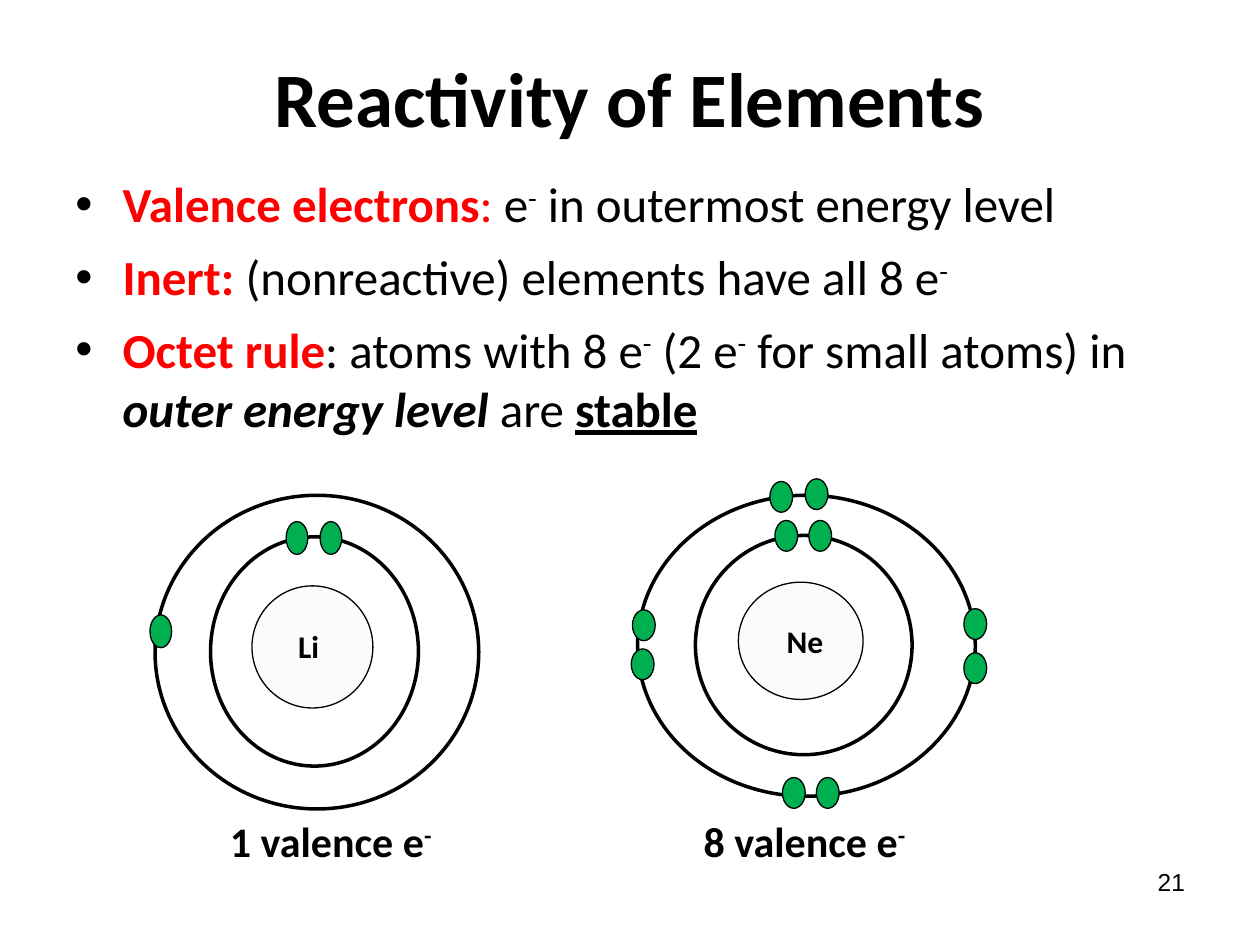
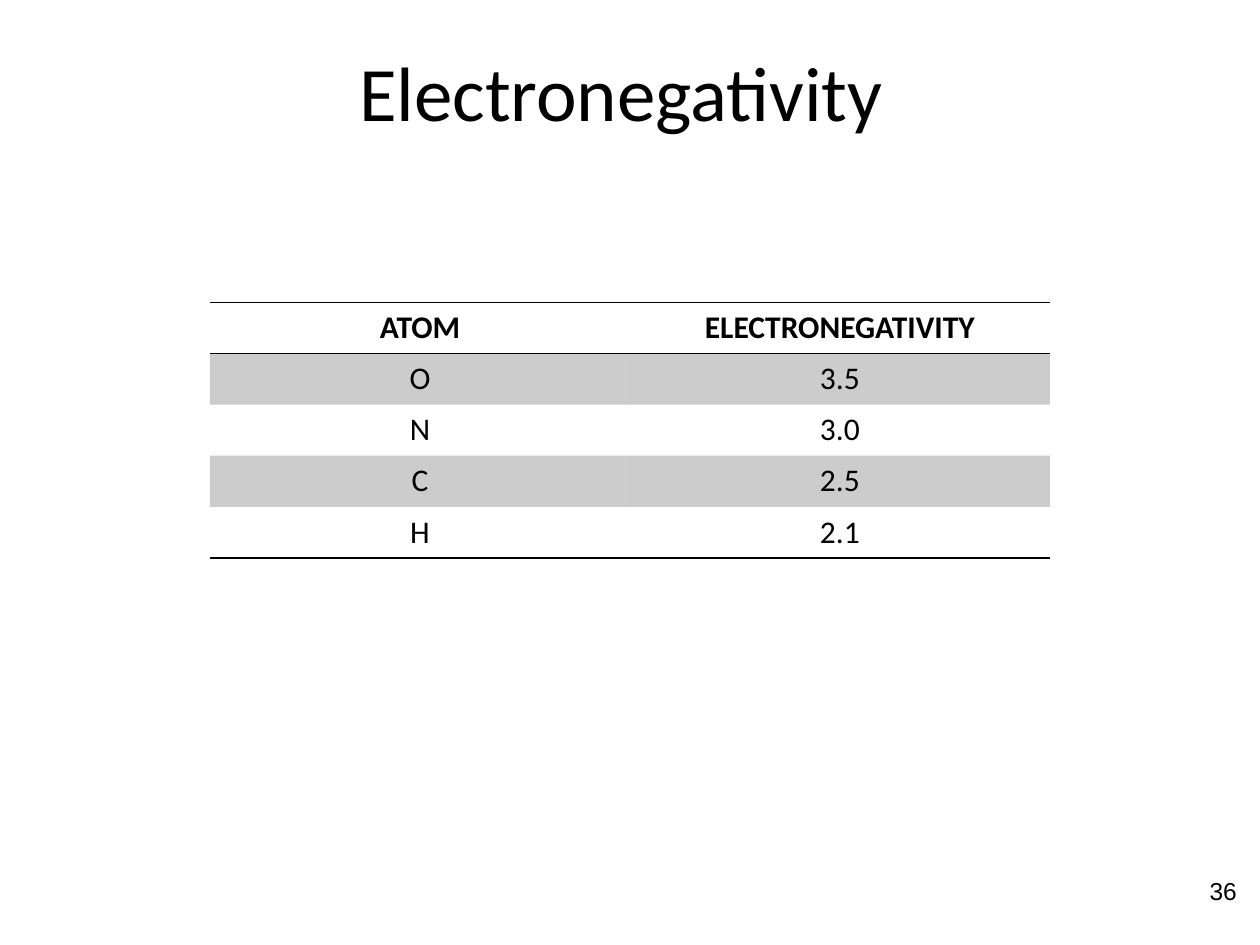
from lxml import etree
from pptx import Presentation
from pptx.dml.color import RGBColor
from pptx.enum import shapes, text
from pptx.oxml.ns import qn
from pptx.util import Pt

INK = {"black": "000000", "red": "FF0000", "core": "FCFBF9", "green": "00B050"}
FACE = "Calibri"
MID = text.PP_ALIGN.CENTER


def hue(name):
    return RGBColor.from_string(INK[name])


def node(parent, tag, **attrs):
    return etree.SubElement(parent, qn(tag), attrs)


def style(run, size, marks="", face=FACE):
    font = run.font
    font.name, font.size = face, Pt(size)
    font.bold, font.italic = "b" in marks, "i" in marks
    font.underline = "u" in marks
    font.color.rgb = hue("red" if "r" in marks else "black")
    if "^" in marks:
        run._r.get_or_add_rPr().set("baseline", "30000")


def write(para, parts, size, align=None, face=FACE):
    para.alignment = align
    for words, marks in parts:
        run = para.add_run()
        run.text = words
        style(run, size, marks, face)


def put(home, box, parts, size, align=MID, face=FACE):
    frame = home.add_textbox(*map(Pt, box)).text_frame
    frame.word_wrap = True
    write(frame.paragraphs[0], parts, size, align, face)


def number(slide, left, top, page):
    put(slide.shapes, (left, top, 168, 37.4), [(page, "")], 14, text.PP_ALIGN.RIGHT, "Arial")


def title(slide, words, high, anchor, marks=""):
    head = slide.shapes.title
    head.left, head.top, head.width, head.height = map(Pt, (36, 21.6, 648, high))
    frame = head.text_frame
    frame.text = words
    frame.auto_size = text.MSO_AUTO_SIZE.NONE
    frame.vertical_anchor = anchor
    frame.paragraphs[0].alignment = MID
    style(frame.paragraphs[0].runs[0], 44, marks)


def bullets(slide, box, items):
    frame = slide.shapes.add_textbox(*map(Pt, box)).text_frame
    frame.word_wrap = True
    for i, parts in enumerate(items):
        para = frame.add_paragraph() if i else frame.paragraphs[0]
        para.space_before = Pt(8)
        props = para._p.get_or_add_pPr()
        props.set("marL", str(Pt(27)))
        props.set("indent", str(-Pt(27)))
        node(node(props, "a:buClr"), "a:srgbClr", val=INK["black"])
        node(props, "a:buFont", typeface="Arial")
        node(props, "a:buChar", char="•")
        write(para, parts, 28)


def ring(group, box, fill=None, width=0.75):
    disc = group.shapes.add_shape(shapes.MSO_SHAPE.OVAL, *map(Pt, box))
    disc.shadow.inherit = False
    if fill:
        disc.fill.solid()
        disc.fill.fore_color.rgb = hue(fill)
    else:
        disc.fill.background()
    disc.line.color.rgb = hue("black")
    disc.line.width = Pt(width)


def atom(slide, box, core, inner, dot, spots, label, name):
    left, top, wide, high = box
    group = slide.shapes.add_group_shape()

    def place(part):
        x, y, w, h = part
        return left + x, top + y, w, h

    ring(group, place(core), "core")
    ring(group, place(inner), width=2)
    ring(group, box, width=2)
    for spot in spots:
        ring(group, place(spot + dot), "green")
    put(group.shapes, place(label), [(name, "b")], 18)


def caption(slide, left, count):
    put(slide.shapes, (left, 462.2, 300.2, 36.7), [(f"{count} valence e", "b"), ("-", "b^")], 24)


def edge(cell, side, shown):
    props = cell._tc.get_or_add_tcPr()
    line = node(props, f"a:ln{side}", w=str(Pt(1)))
    if shown:
        node(node(line, "a:solidFill"), "a:srgbClr", val=INK["black"])
    else:
        node(line, "a:noFill")


def grid(slide, box, rows):
    left, top, wide, high = box
    table = slide.shapes.add_table(len(rows), len(rows[0]), *map(Pt, box)).table
    table.first_row = table.horz_banding = False
    for row in table.rows:
        row.height = Pt(high / len(rows))
    for r, words in enumerate(rows):
        for c, word in enumerate(words):
            cell = table.cell(r, c)
            cell.text = word
            para = cell.text_frame.paragraphs[0]
            para.alignment = MID
            style(para.runs[0], 18, "" if r else "b")
            for side, shown in (("L", False), ("R", False), ("T", r < 2),
                                ("B", r in (0, len(rows) - 1))):
                edge(cell, side, shown)
            if r % 2:
                cell.fill.solid()
                cell.fill.fore_color.rgb = hue("black")
                shade = cell._tc.tcPr.find(qn("a:solidFill"))[0]
                node(shade, "a:alpha", val="20000")
            else:
                cell.fill.background()


def octet(slide):
    number(slide, 516.2, 491.8, "21")
    title(slide, "Reactivity of Elements", 67, text.MSO_ANCHOR.MIDDLE, "b")
    bullets(slide, (36, 95.8, 648, 270), [
        [("Valence electrons", "rb"), (": ", "r"), ("e", ""), ("-", "^"),
         (" in outermost energy level", "")],
        [("Inert: ", "rb"), ("(nonreactive) elements have all 8 e", ""), ("-", "^")],
        [("Octet rule", "rb"), (": atoms with 8 e", ""), ("-", "^"), (" (2 e", ""),
         ("-", "^"), (" for small atoms) in ", ""), ("outer energy level", "bi"),
         (" are ", ""), ("stable", "bu")],
    ])
    atom(slide, (88.6, 283, 185, 179.3), (55.4, 51.8, 69.1, 69.8),
         (31.7, 23.8, 118.8, 131), (12.4, 18.7),
         [(74.9, 15.1), (94.3, 15.1), (-2.9, 68.4)],
         (69.1, 72, 37.4, 37.4), "Li")
    atom(slide, (364.3, 283, 193, 172), (57.6, 49.7, 71.3, 67),
         (33.1, 23, 123.8, 125.3), (13, 17.6),
         [(78.5, 14.4), (97.9, 14.4), (-2.9, 65.5), (-3.6, 87.8),
          (82.8, 161.3), (102.2, 161.3), (186.5, 64.8), (186.5, 90),
          (75.6, -7.9), (95.8, -9.4)],
         (69.1, 69.1, 53.3, 36), "Ne")
    caption(slide, 38.9, 1)
    caption(slide, 309.6, 8)


def pull(slide):
    number(slide, 545.8, 496.8, "36")
    grid(slide, (120, 172.8, 480, 146), [
        ("ATOM", "ELECTRONEGATIVITY"),
        ("O", "3.5"),
        ("N", "3.0"),
        ("C", "2.5"),
        ("H", "2.1"),
    ])
    title(slide, "Electronegativity ", 90, text.MSO_ANCHOR.TOP)


def main():
    deck = Presentation()
    deck.slide_width, deck.slide_height = Pt(720), Pt(540)
    for build in (octet, pull):
        build(deck.slides.add_slide(deck.slide_layouts[5]))
    deck.save("out.pptx")


if __name__ == "__main__":
    main()
